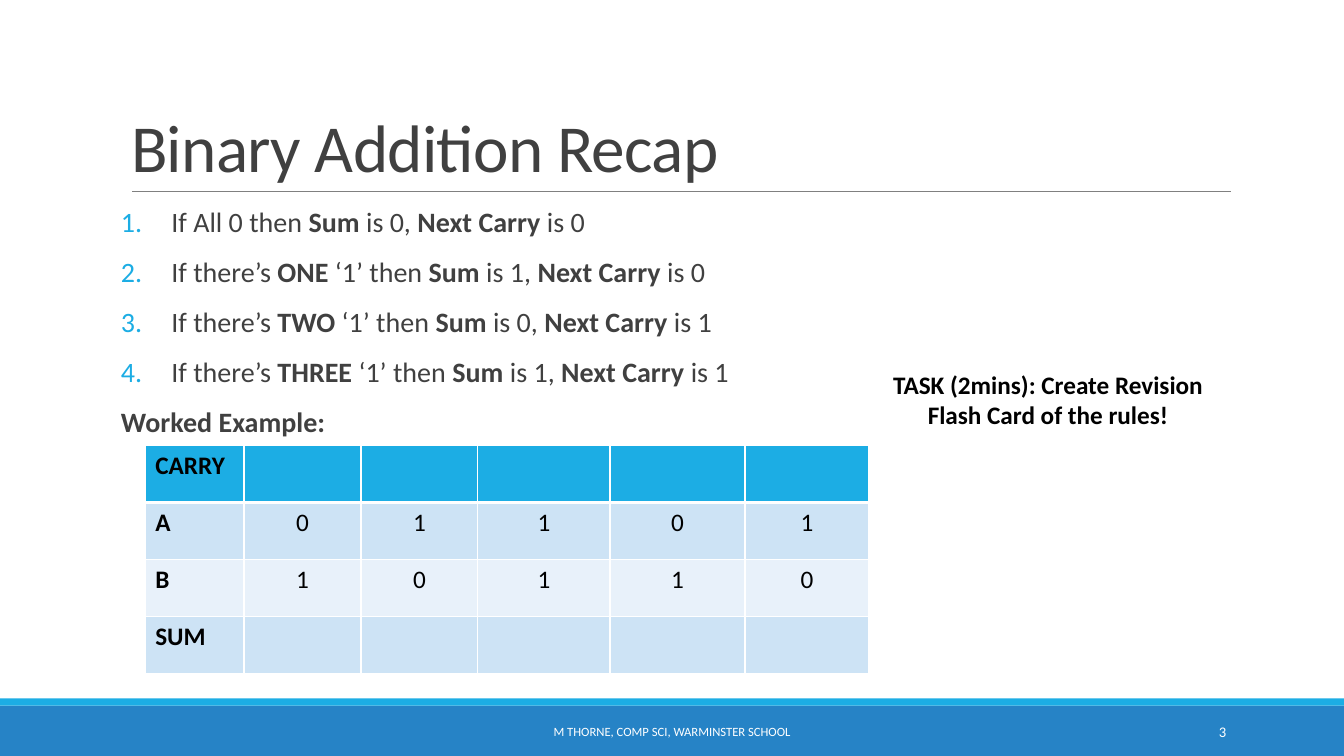
from dataclasses import dataclass

from lxml import etree
from pptx import Presentation
from pptx.dml.color import RGBColor
from pptx.enum.shapes import MSO_CONNECTOR, MSO_SHAPE
from pptx.enum.text import MSO_ANCHOR, MSO_AUTO_SIZE, PP_ALIGN
from pptx.oxml.ns import qn
from pptx.util import Inches, Pt

FONT = "Calibri"
WHITE = RGBColor(0xFF, 0xFF, 0xFF)
BLACK = RGBColor(0, 0, 0)
DARK = RGBColor(0x40, 0x40, 0x40)
GREY = RGBColor(0x80, 0x80, 0x80)
CYAN = RGBColor(0x1C, 0xAD, 0xE4)
BLUE = RGBColor(0x26, 0x83, 0xC6)
BAND_DARK = RGBColor(0xCD, 0xE3, 0xF5)
BAND_LIGHT = RGBColor(0xE8, 0xF1, 0xFA)

RECT = MSO_SHAPE.RECTANGLE
STRAIGHT = MSO_CONNECTOR.STRAIGHT
LEFT, CENTER, RIGHT = PP_ALIGN.LEFT, PP_ALIGN.CENTER, PP_ALIGN.RIGHT
TOP, MIDDLE, BOTTOM = MSO_ANCHOR.TOP, MSO_ANCHOR.MIDDLE, MSO_ANCHOR.BOTTOM
NO_AUTOFIT = MSO_AUTO_SIZE.NONE


@dataclass
class Box:
    left: float
    top: float
    width: float
    height: float

    def emu(self) -> list[int]:
        return [Inches(v) for v in (self.left, self.top, self.width, self.height)]


@dataclass
class Bar:
    box: Box
    color: RGBColor


@dataclass
class Label:
    box: Box
    lines: list[str]
    size: float
    color: RGBColor
    align: PP_ALIGN
    anchor: MSO_ANCHOR
    bold: bool = False


BARS = [
    Bar(Box(0, 7, 13.33, 0.5), BLUE),
    Bar(Box(0, 6.93, 13.33, 0.07), CYAN),
]
LABELS = [
    Label(Box(8.74, 3.61, 3.31, 0.71),
          ["TASK (2mins): Create Revision", "Flash Card of the rules!"],
          18, BLACK, CENTER, TOP, True),
    Label(Box(4.03, 7.06, 5.27, 0.4), ["M THORNE, COMP SCI, WARMINSTER SCHOOL"],
          9, WHITE, CENTER, MIDDLE),
    Label(Box(10.83, 7.06, 1.43, 0.4), ["3"], 10.5, WHITE, RIGHT, MIDDLE),
]
# Text between asterisks is bold
RULES = [
    "If All 0 then *Sum* is 0, *Next Carry *is 0",
    "If there’s *ONE* ‘1’ then *Sum* is 1, *Next Carry* is 0",
    "If there’s *TWO* ‘1’ then *Sum* is 0, *Next Carry *is 1",
    "If there’s *THREE* ‘1’ then *Sum* is 1, *Next Carry *is 1",
]
ROWS = [("CARRY", ""), ("A", "01101"), ("B", "10110"), ("SUM", "")]
ROW_FILLS = [CYAN, BAND_DARK, BAND_LIGHT, BAND_DARK]
COL_WIDTHS = [0.98, 1.16, 1.16, 1.31, 1.34, 1.23]


def add_run(p, text: str, size: float, color: RGBColor, bold: bool = False):
    r = p.add_run()
    r.text = text
    r.font.name = FONT
    r.font.size = Pt(size)
    r.font.bold = bold
    r.font.color.rgb = color
    return r


def place(sp, box: Box) -> None:
    sp.left, sp.top, sp.width, sp.height = box.emu()


def add_solid(parent, color: RGBColor) -> None:
    fill = etree.SubElement(parent, qn("a:solidFill"))
    etree.SubElement(fill, qn("a:srgbClr"), val=str(color))


def add_bar(slide, bar: Bar) -> None:
    sp = slide.shapes.add_shape(RECT, *bar.box.emu())
    sp.shadow.inherit = False
    sp.fill.solid()
    sp.fill.fore_color.rgb = bar.color
    sp.line.fill.background()


def add_rule_line(slide) -> None:
    line = slide.shapes.add_connector(
        STRAIGHT, Inches(1.31), Inches(1.9), Inches(12.21), Inches(1.9))
    line.line.color.rgb = GREY
    line.line.width = Pt(0.5)
    etree.SubElement(line._element.spPr, qn("a:effectLst"))


def add_label(slide, label: Label) -> None:
    tf = slide.shapes.add_textbox(*label.box.emu()).text_frame
    tf.word_wrap = True
    tf.vertical_anchor = label.anchor
    for i, text in enumerate(label.lines):
        p = tf.add_paragraph() if i else tf.paragraphs[0]
        p.alignment = label.align
        add_run(p, text, label.size, label.color, label.bold)


def fill_title(sp) -> None:
    place(sp, Box(1.2, 0.31, 11, 1.59))
    tf = sp.text_frame
    tf.auto_size = NO_AUTOFIT
    tf.vertical_anchor = BOTTOM
    p = tf.paragraphs[0]
    p.alignment = LEFT
    p.line_spacing = 0.85
    r = add_run(p, "Binary Addition Recap", 48, DARK)
    r.font._element.set("spc", "-50")


def fill_body(sp) -> None:
    place(sp, Box(1.2, 2.02, 11, 4.4))
    tf = sp.text_frame
    tf.auto_size = NO_AUTOFIT
    tf.vertical_anchor = TOP
    tf.margin_left = tf.margin_right = 0
    for i, text in enumerate(RULES + ["*Worked Example:*"]):
        p = tf.add_paragraph() if i else tf.paragraphs[0]
        p.line_spacing = 0.9
        p.space_before, p.space_after = Pt(12), Pt(2)
        numbered = i < len(RULES)
        indent = Inches(0.5) if numbered else 0
        pPr = p._p.get_or_add_pPr()
        pPr.set("marL", str(indent))
        pPr.set("indent", str(-indent))
        if numbered:
            add_solid_bullet = etree.SubElement(pPr, qn("a:buClr"))
            etree.SubElement(add_solid_bullet, qn("a:srgbClr"), val=str(CYAN))
            etree.SubElement(pPr, qn("a:buFont"), typeface=FONT)
            etree.SubElement(pPr, qn("a:buAutoNum"), type="arabicPeriod")
        else:
            etree.SubElement(pPr, qn("a:buNone"))
        for j, part in enumerate(text.split("*")):
            if part:
                add_run(p, part, 20, DARK, j % 2 == 1)


def set_borders(cell, header: bool, below_header: bool) -> None:
    tcPr = cell._tc.get_or_add_tcPr()
    thick = {"lnB": header, "lnT": below_header}
    for side in ("lnL", "lnR", "lnT", "lnB"):
        width = Pt(3 if thick.get(side) else 1)
        add_solid(etree.SubElement(tcPr, qn(f"a:{side}"), w=str(width)), WHITE)


def add_sum_table(slide) -> None:
    box = Box(1.44, 4.42, sum(COL_WIDTHS), 2.26)
    table = slide.shapes.add_table(len(ROWS), len(COL_WIDTHS), *box.emu()).table
    for col, width in zip(table.columns, COL_WIDTHS):
        col.width = Inches(width)
    for i, (name, digits) in enumerate(ROWS):
        for j, cell in enumerate(table.rows[i].cells):
            set_borders(cell, i == 0, i == 1)
            cell.fill.solid()
            cell.fill.fore_color.rgb = ROW_FILLS[i]
            text = name if j == 0 else digits[j - 1:j]
            if text:
                p = cell.text_frame.paragraphs[0]
                p.alignment = CENTER if j else LEFT
                add_run(p, text, 18, BLACK, j == 0)


def main() -> None:
    prs = Presentation()
    prs.slide_width, prs.slide_height = Inches(13.33), Inches(7.5)
    slide = prs.slides.add_slide(prs.slide_layouts[1])

    # Footer bars and title line
    for bar in BARS:
        add_bar(slide, bar)
    add_rule_line(slide)

    # Title and numbered rules
    fill_title(slide.shapes.title)
    fill_body(slide.placeholders[1])

    # Worked example, task and footer text
    add_sum_table(slide)
    for label in LABELS:
        add_label(slide, label)

    prs.save("out.pptx")


if __name__ == "__main__":
    main()
